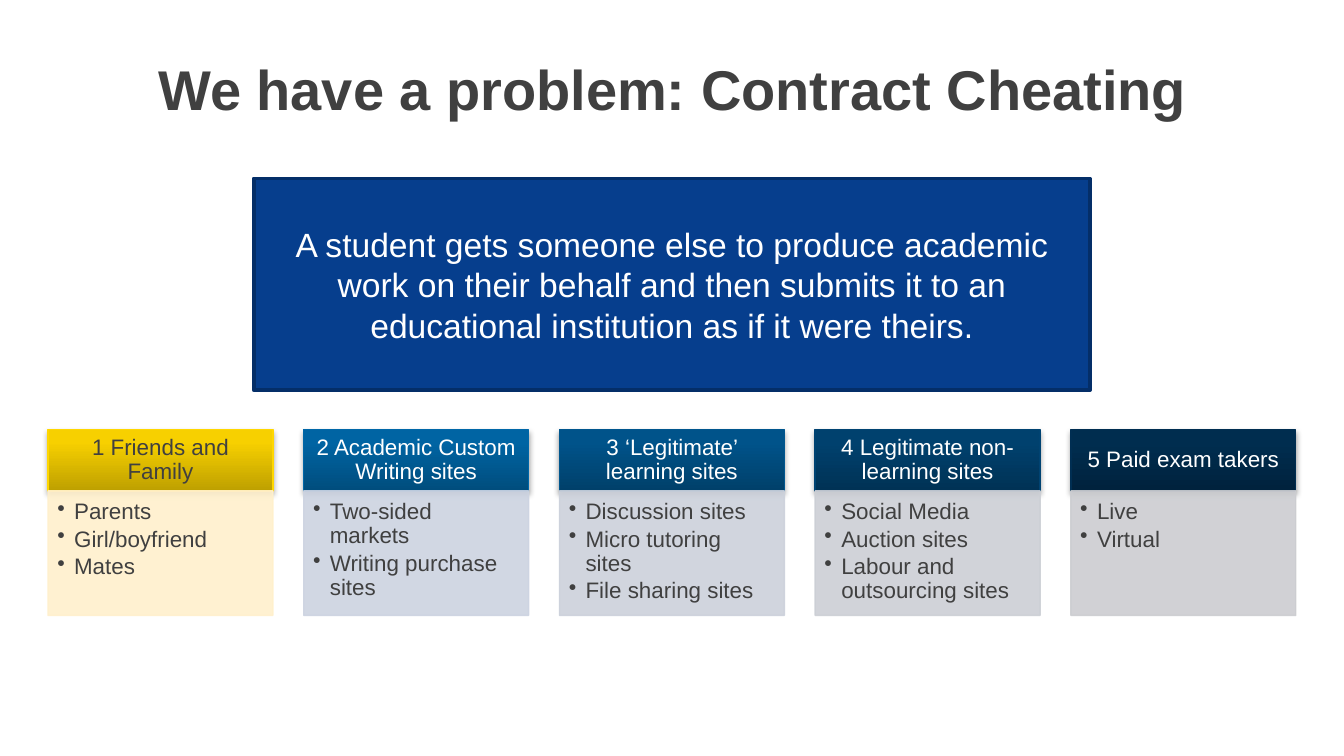
"""Build the slide on contract cheating and its five kinds of source."""
from copy import deepcopy

from pptx import Presentation
from pptx.dml.color import RGBColor
from pptx.enum.shapes import MSO_SHAPE
from pptx.enum.text import MSO_ANCHOR, PP_ALIGN
from pptx.oxml import parse_xml
from pptx.oxml.ns import nsdecls, qn
from pptx.oxml.xmlchemy import OxmlElement
from pptx.util import Pt

FONT = "Arial"
GREY = RGBColor(0x40, 0x40, 0x40)
WHITE = RGBColor(0xFF, 0xFF, 0xFF)
BLUE = RGBColor(0x06, 0x3E, 0x8D)
NAVY = RGBColor(0x04, 0x2E, 0x68)
GOLD = [RGBColor.from_string(c) for c in ("BEA000", "F7D000", "F8D100", "FFD700", "FFF0CC")]
AZURE = [RGBColor.from_string(c) for c in ("004D7D", "0064A3", "0064A4", "0067A8", "CCD3E1")]
OCEAN = [RGBColor.from_string(c) for c in ("00406A", "00538A", "00548A", "00568E", "CCD1DB")]
DEEP = [RGBColor.from_string(c) for c in ("003255", "00416E", "00416F", "004372", "CCCFD5")]
NIGHT = [RGBColor.from_string(c) for c in ("00223D", "002D4F", "002D50", "002E52", "CCCDD1")]

LEFT, STEP, WIDTH = 25.7, 137, 120.5
TOP, HEAD, BODY = 230.2, 32.8, 66.7

GROUPS = [
    ("1 Friends and Family", GREY, GOLD, ["Parents", "Girl/boyfriend", "Mates"]),
    ("2 Academic Custom Writing sites", WHITE, AZURE,
     ["Two-sided markets", "Writing purchase sites"]),
    ("3 ‘Legitimate’ learning sites", WHITE, OCEAN,
     ["Discussion sites", "Micro tutoring sites", "File sharing sites"]),
    ("4 Legitimate non-learning sites", WHITE, DEEP,
     ["Social Media", "Auction sites", "Labour and outsourcing sites"]),
    ("5 Paid exam takers", WHITE, NIGHT, ["Live", "Virtual"]),
]


def style(par, size, color, align, bold=False):
    """Set the alignment and font of a paragraph."""
    par.alignment = align
    font = par.font
    font.name, font.size, font.bold = FONT, Pt(size), bold
    font.color.rgb = color


def inset(frame, left, top, right, bottom):
    """Set the margins of a text frame and wrap it."""
    frame.word_wrap = True
    frame.margin_left, frame.margin_top = Pt(left), Pt(top)
    frame.margin_right, frame.margin_bottom = Pt(right), Pt(bottom)


def add_rect(slide, box, line, weight):
    """Add a rectangle without shadow and with a coloured line."""
    rect = slide.shapes.add_shape(MSO_SHAPE.RECTANGLE, *map(Pt, box))
    rect.shadow.inherit = False
    rect.line.color.rgb = line
    rect.line.width = Pt(weight)
    return rect


def shade(rect, colors):
    """Fill a rectangle with three stops rising from its foot."""
    rect.fill.gradient()
    rect.fill.gradient_angle = 90
    stops = rect._element.spPr.find(".//" + qn("a:gsLst"))
    stops.append(deepcopy(stops[-1]))
    for stop, place, color in zip(rect.fill.gradient_stops, (0, 0.8, 1), colors):
        stop.position = place
        stop.color.rgb = color


def drop(rect):
    """Give a rectangle a soft shadow below it."""
    rect._element.spPr.find(qn("a:effectLst")).append(parse_xml(
        f'<a:outerShdw {nsdecls("a")} blurRad="{Pt(3.1)}" dist="{Pt(1.8)}" '
        'dir="5400000" rotWithShape="0"><a:srgbClr val="000000">'
        '<a:alpha val="35000"/></a:srgbClr></a:outerShdw>'))


def fade(rect):
    """Make the solid fill and line of a rectangle slightly clear."""
    for color in rect._element.spPr.iter(qn("a:srgbClr")):
        alpha = OxmlElement("a:alpha")
        alpha.set("val", "90000")
        color.append(alpha)


def add_dot(par):
    """Give a paragraph a hanging bullet."""
    props = par._p.get_or_add_pPr()
    props.set("marL", str(Pt(9)))
    props.set("indent", str(Pt(-9)))
    dot = OxmlElement("a:buChar")
    dot.set("char", "•")
    props.append(dot)


def add_head(slide, left, text, ink, colors):
    """Add the shaded heading of a group."""
    rect = add_rect(slide, (left, TOP, WIDTH, HEAD), colors[3], 0.75)
    shade(rect, colors)
    drop(rect)
    frame = rect.text_frame
    inset(frame, 6.7, 3.8, 6.7, 3.8)
    frame.vertical_anchor = MSO_ANCHOR.MIDDLE
    par = frame.paragraphs[0]
    par.text = text
    par.line_spacing = 0.9
    style(par, 12, ink, PP_ALIGN.CENTER)


def add_body(slide, left, items, tint):
    """Add the tinted bullet list of a group."""
    rect = add_rect(slide, (left, TOP + HEAD, WIDTH, BODY), tint, 0.75)
    rect.fill.solid()
    rect.fill.fore_color.rgb = tint
    fade(rect)
    frame = rect.text_frame
    inset(frame, 5, 5, 6.7, 7.5)
    frame.vertical_anchor = MSO_ANCHOR.TOP
    frame.text = "\n".join(items)
    for par in frame.paragraphs:
        add_dot(par)
        par.line_spacing = 0.9
        par.space_after = Pt(1.8)
        style(par, 12, GREY, PP_ALIGN.LEFT)


def add_quote(slide, text):
    """Add the blue box that holds the definition."""
    rect = add_rect(slide, (136, 95.6, 448, 113.4), NAVY, 2)
    rect.fill.solid()
    rect.fill.fore_color.rgb = BLUE
    frame = rect.text_frame
    inset(frame, 7.2, 3.6, 7.2, 3.6)
    frame.vertical_anchor = MSO_ANCHOR.MIDDLE
    frame.text = text
    style(frame.paragraphs[0], 18, WHITE, PP_ALIGN.CENTER)


def add_title(slide, text):
    """Add the bold title."""
    frame = slide.shapes.add_textbox(Pt(36.4), Pt(29), Pt(648), Pt(36.5)).text_frame
    inset(frame, 0, 0, 0, 0)
    frame.text = text
    style(frame.paragraphs[0], 30, GREY, PP_ALIGN.CENTER, True)


def main():
    """Build and save the slide."""
    deck = Presentation()
    deck.slide_width, deck.slide_height = Pt(720), Pt(405)
    slide = deck.slides.add_slide(deck.slide_layouts[6])
    for i, (text, ink, colors, items) in enumerate(GROUPS):
        left = LEFT + i * STEP
        add_head(slide, left, text, ink, colors)
        add_body(slide, left, items, colors[4])
    add_quote(slide, "A student gets someone else to produce academic work on their "
                     "behalf and then submits it to an educational institution as if "
                     "it were theirs.")
    add_title(slide, "We have a problem: Contract Cheating")
    deck.save("out.pptx")


if __name__ == "__main__":
    main()
